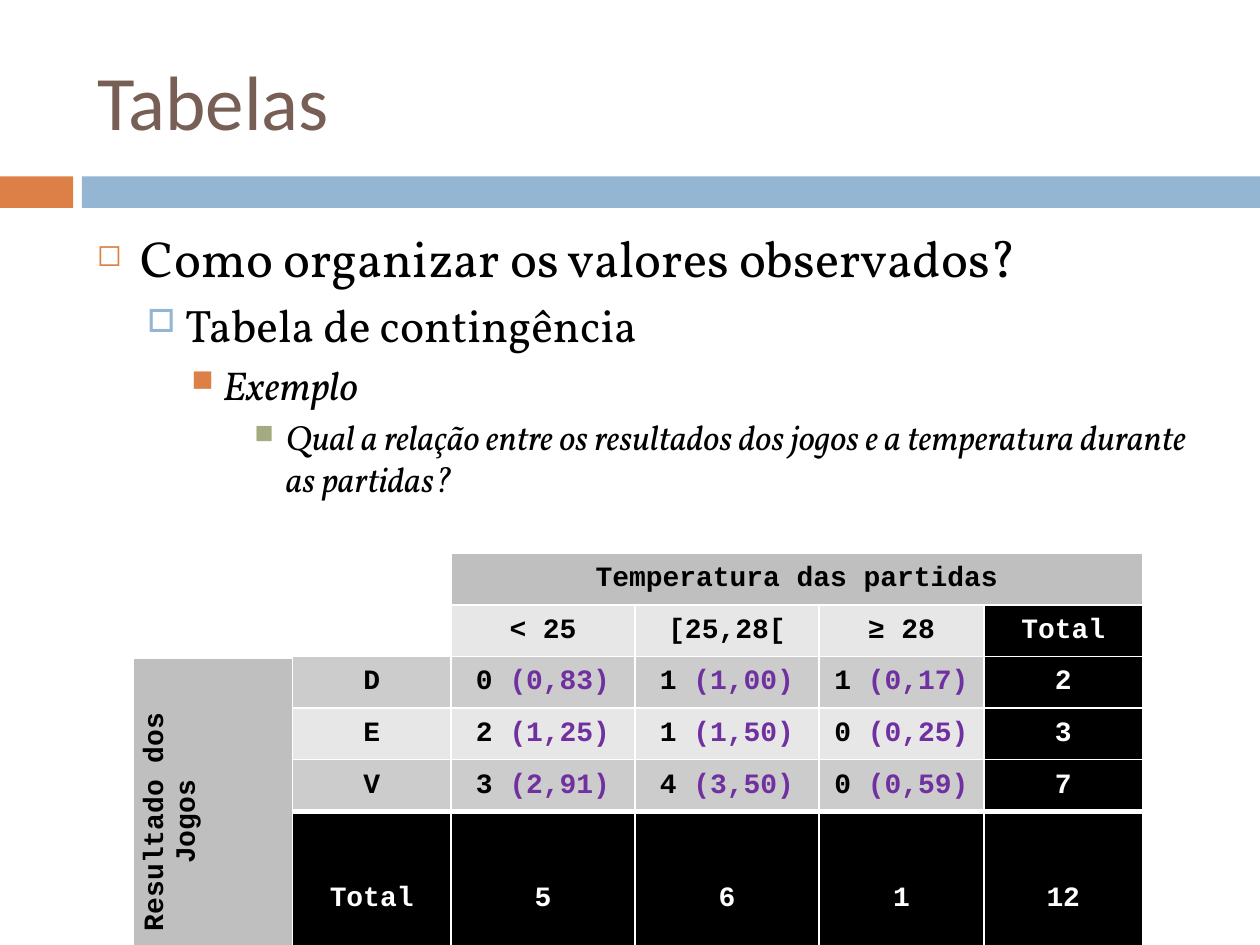
from dataclasses import dataclass

from lxml import etree
from pptx import Presentation
from pptx import util as u
from pptx.dml.color import RGBColor
from pptx.enum import shapes, text
from pptx.oxml.ns import qn

COLORS = {
    "orange": "DD8047", "blue": "94B6D2", "green": "A5AB81", "brown": "775F55",
    "black": "000000", "white": "FFFFFF", "purple": "7030A0",
    "header": "BFBFBF", "dark_band": "CCCCCC", "light_band": "E7E7E7",
}


@dataclass
class Bar:
    left: float
    width: float
    color: str


@dataclass
class Bullet:
    wording: str
    size: float
    indent: float
    hanging: float
    before: float
    mark: str
    color: str
    scale: int
    italic: bool = False


BARS = [Bar(0, 0.58, "orange"), Bar(0.65, 9.35, "blue")]
BULLETS = [
    Bullet("Como organizar os valores observados?", 29, 0.35, 0.35, 7, "◻", "orange", 60),
    Bullet("Tabela de contingência", 26, 0.7, 0.3, 5.5, "□", "blue", 70),
    Bullet("Exemplo", 23, 1, 0.25, 5, "■", "orange", 75, True),
    Bullet("Qual a relação entre os resultados dos jogos e a temperatura durante as partidas?",
           20, 1.5, 0.25, 4, "■", "green", 75, True),
]
COLUMN_WIDTHS = [1.26, 1.26, 1.46, 1.46, 1.31, 1.26]
ROW_HEIGHT = 0.41
ROWS = [
    ["", "", "Temperatura das partidas", "", "", ""],
    ["", "", "< 25", "[25,28[", "≥ 28", "Total"],
    ["Resultado dos Jogos", "D", "0 (0,83)", "1 (1,00)", "1 (0,17)", "2"],
    ["", "E", "2 (1,25)", "1 (1,50)", "0 (0,25)", "3"],
    ["", "V", "3 (2,91)", "4 (3,50)", "0 (0,59)", "7"],
    ["", "Total", "5", "6", "1", "12"],
]
LAST_ROW, LAST_COLUMN = len(ROWS) - 1, len(COLUMN_WIDTHS) - 1


def rgb(name: str) -> RGBColor:
    return RGBColor.from_string(COLORS[name])


def style_run(run, font: str, size: float, color: str, bold=False, italic=False) -> None:
    run.font.name = font
    run.font.size = u.Pt(size)
    run.font.bold = bold
    run.font.italic = italic
    run.font.color.rgb = rgb(color)


def draw_bar(slide, bar: Bar) -> None:
    shape = slide.shapes.add_shape(
        shapes.MSO_SHAPE.RECTANGLE,
        u.Inches(bar.left), u.Inches(1.4), u.Inches(bar.width), u.Inches(0.25))
    shape.shadow.inherit = False
    shape.fill.solid()
    shape.fill.fore_color.rgb = rgb(bar.color)
    shape.line.fill.background()


def write_bullet(paragraph, bullet: Bullet, level: int) -> None:
    paragraph.text = bullet.wording
    paragraph.level = level
    paragraph.space_before = u.Pt(bullet.before)
    style_run(paragraph.runs[0], "Vollkorn", bullet.size, "black", italic=bullet.italic)
    properties = paragraph._p.get_or_add_pPr()
    properties.set("marL", str(u.Inches(bullet.indent)))
    properties.set("indent", str(-u.Inches(bullet.hanging)))
    color = etree.SubElement(properties, qn("a:buClr"))
    etree.SubElement(color, qn("a:srgbClr"), val=COLORS[bullet.color])
    etree.SubElement(properties, qn("a:buSzPct"), val=str(bullet.scale * 1000))
    etree.SubElement(properties, qn("a:buChar"), char=bullet.mark)


def draw_outline(slide) -> None:
    box = slide.shapes.add_textbox(
        u.Inches(0.67), u.Inches(1.75), u.Inches(8.92), u.Inches(2.5))
    frame = box.text_frame
    frame.word_wrap = True
    for level, bullet in enumerate(BULLETS):
        paragraph = frame.add_paragraph() if level else frame.paragraphs[0]
        write_bullet(paragraph, bullet, level)


def add_borders(cell, top: float) -> None:
    properties = cell._tc.get_or_add_tcPr()
    for side, width in (("L", 1), ("R", 1), ("T", top), ("B", 1)):
        line = etree.SubElement(properties, qn(f"a:ln{side}"), w=str(u.Pt(width)))
        fill = etree.SubElement(line, qn("a:solidFill"))
        etree.SubElement(fill, qn("a:srgbClr"), val=COLORS["white"])


def cell_fill(row: int, column: int) -> str:
    if row == 0 or column == 0:
        return "header"
    if row == LAST_ROW or column == LAST_COLUMN:
        return "black"
    return "light_band" if row % 2 else "dark_band"


def write_cell(cell, wording: str, fill: str) -> None:
    cell.fill.solid()
    cell.fill.fore_color.rgb = rgb(fill)
    cell.vertical_anchor = text.MSO_ANCHOR.MIDDLE
    paragraph = cell.text_frame.paragraphs[0]
    paragraph.alignment = text.PP_ALIGN.CENTER
    observed, bracket, expected = wording.partition("(")
    color = "white" if fill == "black" else "black"
    for part, part_color in ((observed, color), (bracket + expected, "purple")):
        if part:
            run = paragraph.add_run()
            run.text = part
            style_run(run, "Courier New", 16, part_color, bold=True)


def draw_table(slide) -> None:
    table = slide.shapes.add_table(
        len(ROWS), len(COLUMN_WIDTHS), u.Inches(1.06), u.Inches(4.39),
        u.Inches(sum(COLUMN_WIDTHS)), u.Inches(ROW_HEIGHT * len(ROWS))).table
    table.first_row = table.horz_banding = False
    for column, width in zip(table.columns, COLUMN_WIDTHS):
        column.width = u.Inches(width)
    for row_index, wordings in enumerate(ROWS):
        table.rows[row_index].height = u.Inches(ROW_HEIGHT)
        for column_index, wording in enumerate(wordings):
            cell = table.cell(row_index, column_index)
            heavy = row_index == LAST_ROW or (row_index, column_index) == (2, 0)
            add_borders(cell, 3 if heavy else 1)
            if wording:
                write_cell(cell, wording, cell_fill(row_index, column_index))
            else:
                cell.fill.background()
    table.cell(0, 2).merge(table.cell(0, LAST_COLUMN))
    side_header = table.cell(2, 0)
    side_header.merge(table.cell(LAST_ROW, 0))
    side_header._tc.get_or_add_tcPr().set("vert", "vert270")


def draw_title(slide) -> None:
    title = slide.shapes.title
    title.left, title.top = u.Inches(0.67), u.Inches(0.25)
    title.width, title.height = u.Inches(8.92), u.Inches(1.08)
    frame = title.text_frame
    frame.text = "Tabelas"
    frame.vertical_anchor = text.MSO_ANCHOR.MIDDLE
    frame.paragraphs[0].alignment = text.PP_ALIGN.LEFT
    style_run(frame.paragraphs[0].runs[0], "Calibri", 44, "brown")


def main() -> None:
    presentation = Presentation()
    presentation.slide_width, presentation.slide_height = u.Inches(10), u.Inches(7.5)
    slide = presentation.slides.add_slide(presentation.slide_layouts[5])
    for bar in BARS:
        draw_bar(slide, bar)
    draw_title(slide)
    draw_outline(slide)
    draw_table(slide)
    presentation.save("out.pptx")


if __name__ == "__main__":
    main()
